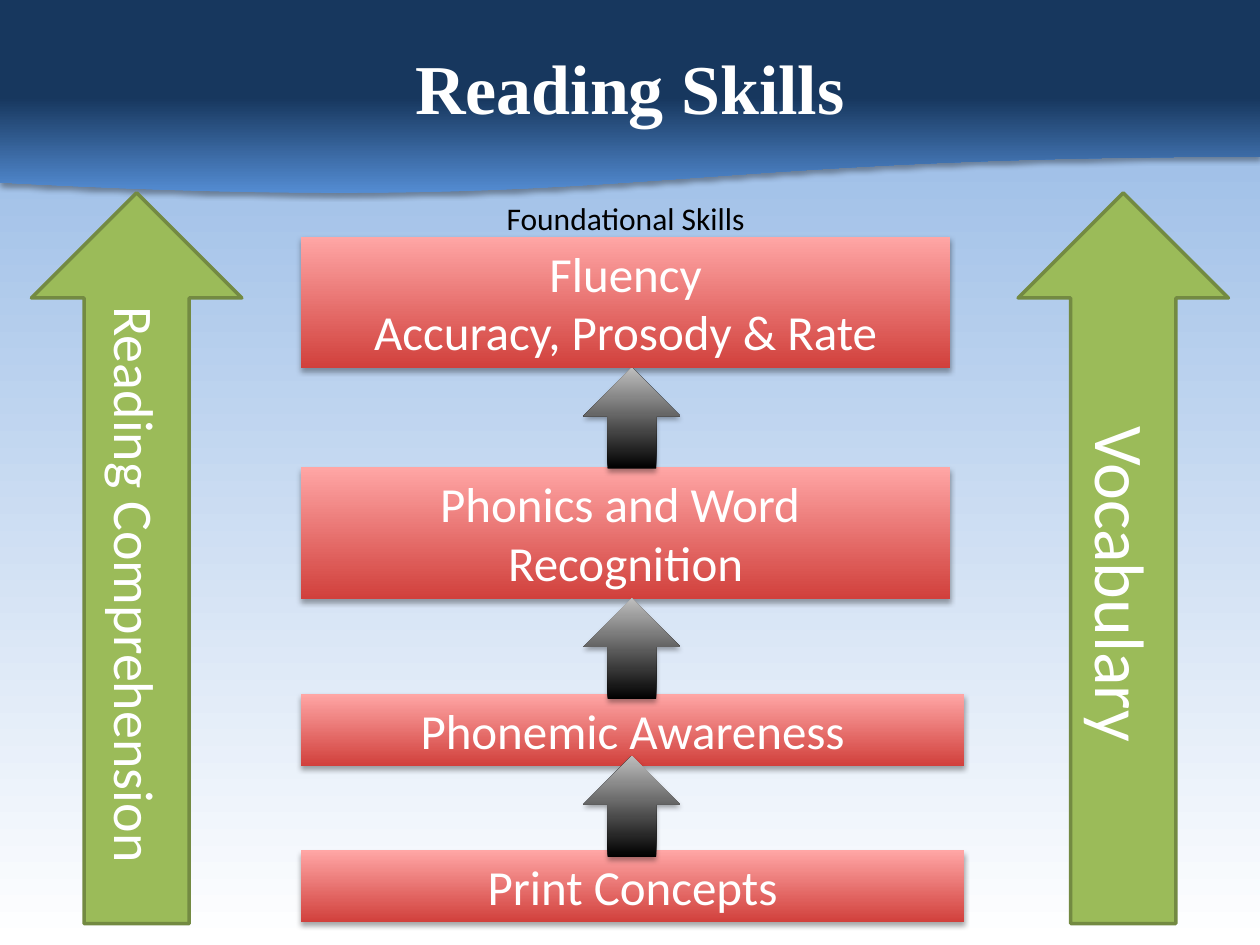
"""Build the Reading Skills slide: foundational skills between two long arrows."""
import pptx
import pptx.dml.color
import pptx.enum.shapes
import pptx.enum.text
import pptx.oxml
import pptx.oxml.ns
import pptx.util

Pt = pptx.util.Pt
RGB = pptx.dml.color.RGBColor
SHAPE = pptx.enum.shapes.MSO_SHAPE
ANCHOR = pptx.enum.text.MSO_ANCHOR
AUTOSIZE = pptx.enum.text.MSO_AUTO_SIZE
CENTER = pptx.enum.text.PP_ALIGN.CENTER

WHITE, BLACK = RGB(0xFF, 0xFF, 0xFF), RGB(0, 0, 0)
NAVY, BLUE, SKY = RGB(0x17, 0x37, 0x5E), RGB(0x55, 0x8E, 0xD5), RGB(0x8E, 0xB4, 0xE3)
RED, PINK = RGB(0xD1, 0x40, 0x3C), RGB(0xFF, 0xA6, 0xA5)
GREEN, OLIVE, GRAY = RGB(0x9B, 0xBB, 0x59), RGB(0x73, 0x8A, 0x42), RGB(0xBD, 0xBD, 0xBD)

TITLE = "Reading Skills"
HEADING = "Foundational Skills"
SKILLS = [
    (["Fluency", "Accuracy, Prosody & Rate"], 135.4, 371),
    (["Phonics and Word ", "Recognition"], 267.1, 371),
    (["Phonemic Awareness"], 396.7, 379),
    (["Print Concepts"], 486, 379),
]
STEP_TOPS = [210.2, 342, 432]
SIDE_ARROWS = [("Reading Comprehension", 18, 32), ("Vocabulary", 581.8, 40)]
SKILL_LEFT = 172
BOX_HEIGHTS = {1: 41, 2: 75}


def set_gradient(fill, element, stops):
    fill.gradient()
    fill.gradient_angle = 90
    stop_list = next(element.iter(pptx.oxml.ns.qn("a:gsLst")))
    for old_stop in list(stop_list):
        stop_list.remove(old_stop)
    for position, color in stops:
        stop_list.append(pptx.oxml.parse_xml(
            f'<a:gs {pptx.oxml.ns.nsdecls("a")} pos="{position * 1000}">'
            f'<a:srgbClr val="{color}"/></a:gs>'))


def shadow_effect(blur, distance, direction, opacity):
    return pptx.oxml.parse_xml(
        f'<a:effectLst {pptx.oxml.ns.nsdecls("a")}>'
        f'<a:outerShdw blurRad="{Pt(blur)}" dist="{Pt(distance)}" dir="{direction * 60000}" '
        f'algn="tl" rotWithShape="0"><a:srgbClr val="000000">'
        f'<a:alpha val="{opacity * 1000}"/></a:srgbClr></a:outerShdw></a:effectLst>')


def write(frame, lines, size, color, anchor, font="Calibri", bold=False, **frame_format):
    for name, value in {"word_wrap": True, "vertical_anchor": anchor, **frame_format}.items():
        setattr(frame, name, value)
    for index, line in enumerate(lines):
        paragraph = frame.paragraphs[0] if index == 0 else frame.add_paragraph()
        paragraph.alignment = CENTER
        run = paragraph.add_run()
        run.text = line
        for name, value in {"size": Pt(size), "name": font, "bold": bold}.items():
            setattr(run.font, name, value)
        run.font.color.rgb = color


def add_shaded(slide, preset, box, stops):
    shaded = slide.shapes.add_shape(preset, *map(Pt, box))
    set_gradient(shaded.fill, shaded.element, stops)
    shaded.line.fill.background()
    shaded.shadow.inherit = False
    empty_effect = shaded.element.spPr.find(pptx.oxml.ns.qn("a:effectLst"))
    shaded.element.spPr.replace(empty_effect, shadow_effect(3.1, 1.8, 90, 35))
    return shaded


def add_side_arrow(slide, label, left, size):
    arrow = slide.shapes.add_shape(SHAPE.UP_ARROW, *map(Pt, (left, 110.2, 120.2, 417.6)))
    arrow.fill.solid()
    arrow.fill.fore_color.rgb = GREEN
    arrow.line.color.rgb = OLIVE
    arrow.line.width = Pt(2)
    arrow.shadow.inherit = False
    write(arrow.text_frame, [label], size, WHITE, ANCHOR.MIDDLE)
    arrow.element.txBody.bodyPr.set("vert", "vert")


def place_title(slide):
    title = slide.shapes.title
    for name, value in {"left": 36, "top": 4.3, "width": 648, "height": 90}.items():
        setattr(title, name, Pt(value))
    write(title.text_frame, [TITLE], 40, WHITE, ANCHOR.MIDDLE, "Times New Roman", True)
    run_format = next(title.element.iter(pptx.oxml.ns.qn("a:rPr")))
    run_format.insert(1, shadow_effect(3, 3, 45, 45))
    slide.shapes.element.append(title.element)


def main():
    deck = pptx.Presentation()
    deck.slide_width, deck.slide_height = Pt(720), Pt(540)
    slide = deck.slides.add_slide(deck.slide_layouts[5])
    set_gradient(slide.background.fill, slide.element, [(0, WHITE), (100, SKY)])

    add_shaded(slide, SHAPE.FLOWCHART_DOCUMENT, (0, 0, 720, 111.6),
               [(0, BLUE), (50, NAVY), (100, NAVY)])
    place_title(slide)
    for label, left, size in SIDE_ARROWS:
        add_side_arrow(slide, label, left, size)
    for lines, top, width in SKILLS:
        box = (SKILL_LEFT, top, width, BOX_HEIGHTS[len(lines)])
        skill = add_shaded(slide, SHAPE.RECTANGLE, box, [(0, RED), (100, PINK)])
        write(skill.text_frame, lines, 28, WHITE, ANCHOR.TOP,
              auto_size=AUTOSIZE.SHAPE_TO_FIT_TEXT)
    for top in STEP_TOPS:
        add_shaded(slide, SHAPE.UP_ARROW, (333.4, top, 55.4, 57.6), [(0, BLACK), (100, GRAY)])

    heading = slide.shapes.add_textbox(*map(Pt, (SKILL_LEFT, 110.2, 371, 29)))
    write(heading.text_frame, [HEADING], 18, BLACK, ANCHOR.TOP,
          auto_size=AUTOSIZE.SHAPE_TO_FIT_TEXT)
    deck.save("out.pptx")


if __name__ == "__main__":
    main()
